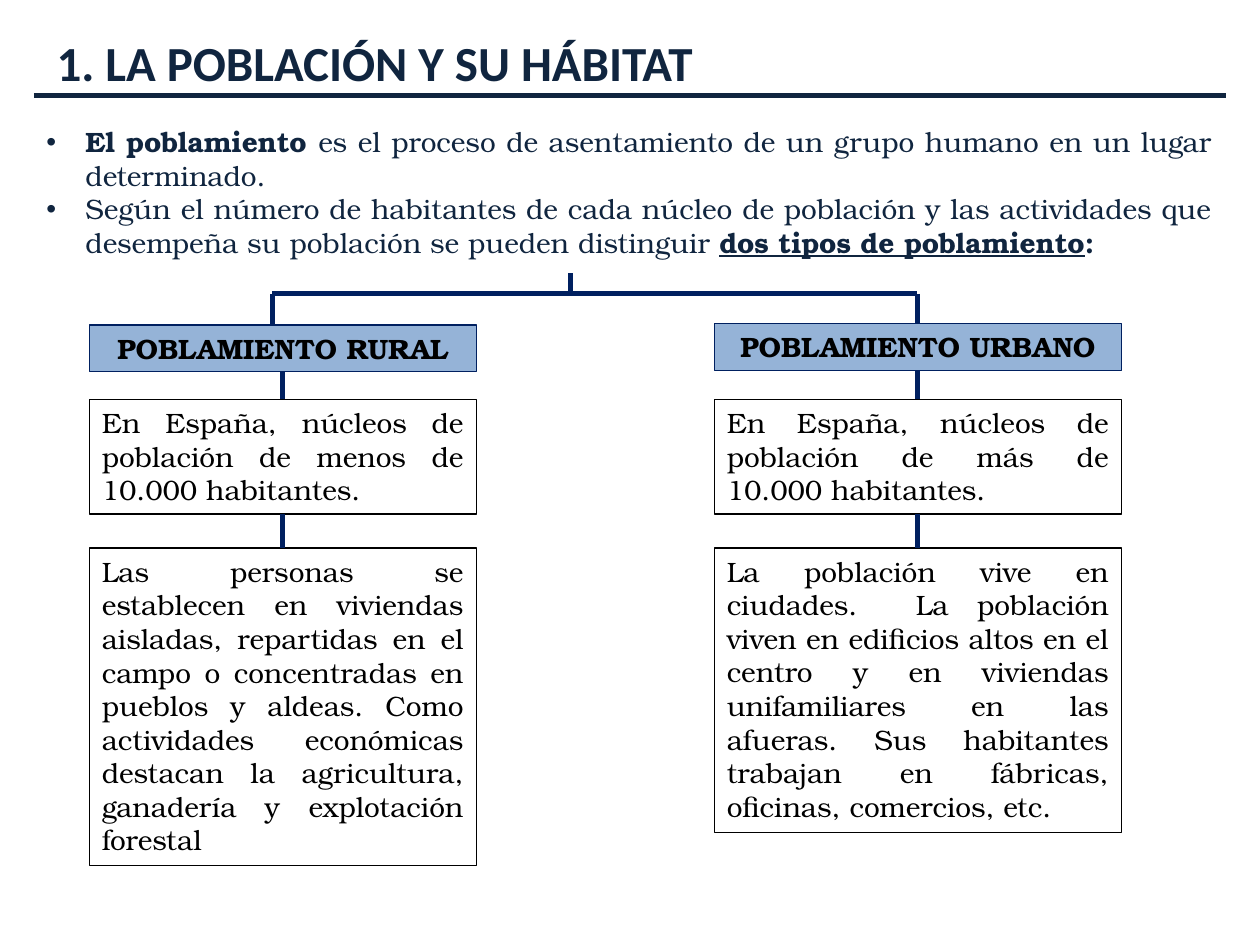
from lxml import etree
from pptx import Presentation
from pptx import util as u
from pptx.dml.color import RGBColor
from pptx.enum import shapes, text
from pptx.oxml.ns import qn

NAVY, BLUE, LIGHT, BLACK = "10253F", "002060", "95B3D7", "000000"
JUSTIFY, CENTER = text.PP_ALIGN.JUSTIFY, text.PP_ALIGN.CENTER


def rgb(value):
    return RGBColor.from_string(value)


class Deck:
    """Style and current slide."""
    font = "TeX Gyre Bonum"
    size = 16

    def __init__(self, prs):
        self.s = prs.slides.add_slide(prs.slide_layouts[6])

    def run(self, p, words, color=BLACK, bold=False, underline=False,
            font=None, size=None):
        r = p.add_run()
        r.text = words
        r.font.name = font or self.font
        r.font.size = u.Pt(size or self.size)
        r.font.bold = bold
        r.font.underline = underline
        r.font.color.rgb = rgb(color)

    def textbox(self, *at):
        tf = self.s.shapes.add_textbox(*map(u.Inches, at)).text_frame
        tf.word_wrap = True
        return tf

    def bullet(self, p, color):
        pPr = p._p.get_or_add_pPr()
        pPr.set("marL", str(u.Inches(0.31)))
        pPr.set("indent", str(-u.Inches(0.31)))
        bu_clr = etree.SubElement(pPr, qn("a:buClr"))
        etree.SubElement(bu_clr, qn("a:srgbClr"), val=color)
        etree.SubElement(pPr, qn("a:buFont"), typeface="Arial")
        etree.SubElement(pPr, qn("a:buChar"), char="•")

    def box(self, at, words, align=JUSTIFY, fill=None, line=BLACK, bold=False):
        sp = self.s.shapes.add_shape(shapes.MSO_SHAPE.RECTANGLE,
                                     *map(u.Inches, at))
        sp.shadow.inherit = False
        if fill:
            sp.fill.solid()
            sp.fill.fore_color.rgb = rgb(fill)
        else:
            sp.fill.background()
        sp.line.color.rgb = rgb(line)
        sp.line.width = u.Pt(0.75)
        tf = sp.text_frame
        tf.word_wrap = True
        tf.vertical_anchor = text.MSO_ANCHOR.TOP
        p = tf.paragraphs[0]
        p.alignment = align
        self.run(p, words, bold=bold)
        return sp

    def line(self, x1, y1, x2, y2, color=BLUE):
        c = self.s.shapes.add_connector(shapes.MSO_CONNECTOR.STRAIGHT,
                                        *map(u.Inches, (x1, y1, x2, y2)))
        c.line.color.rgb = rgb(color)
        c.line.width = u.Pt(3)
        etree.SubElement(c._element.spPr, qn("a:effectLst"))
        return c

    def link(self, upper, lower):
        c = self.line(0, 0, 0, 0)
        c.begin_connect(upper, 2)
        c.end_connect(lower, 0)


def main():
    prs = Presentation()
    prs.slide_width, prs.slide_height = u.Inches(10), u.Inches(7.5)
    deck = Deck(prs)

    # Title and rule
    deck.line(0.27, 0.76, 9.73, 0.76, NAVY)
    tf = deck.textbox(0.35, 0.21, 5.75, 0.57)
    deck.run(tf.paragraphs[0], "1. LA POBLACIÓN Y SU HÁBITAT", NAVY,
             bold=True, font="Calibri", size=28)

    # Introduction: (words, bold, underline) runs for each bullet
    intro = [
        [("El poblamiento ", True, False),
         ("es el proceso de asentamiento de un grupo humano en un lugar "
          "determinado.", False, False)],
        [("Según el número de habitantes de cada núcleo de población y las "
          "actividades que desempeña su población se pueden distinguir ",
          False, False),
         ("dos tipos de poblamiento", True, True),
         (":", True, False)],
    ]
    tf = deck.textbox(0.27, 0.94, 9.45, 1.18)
    for i, runs in enumerate(intro):
        p = tf.add_paragraph() if i else tf.paragraphs[0]
        p.alignment = JUSTIFY
        deck.bullet(p, NAVY)
        for words, bold, underline in runs:
            deck.run(p, words, NAVY, bold, underline)

    # Branching lines
    left, right, bar = 2.16, 7.28, 2.33
    deck.line(4.53, 2.17, 4.53, bar)
    deck.line(left, bar, right, bar)
    for x in (left, right):
        deck.line(x, bar, x, 2.81)

    # Columns: left, width, header top, last box height, texts
    columns = [
        (0.71, 3.07, 2.58, 2.52, "POBLAMIENTO RURAL",
         "En España, núcleos de población de menos de 10.000 habitantes.",
         "Las personas se establecen en viviendas aisladas, repartidas en el "
         "campo o concentradas en pueblos y aldeas. Como actividades "
         "económicas destacan la agricultura, ganadería y explotación "
         "forestal"),
        (5.67, 3.23, 2.57, 2.26, "POBLAMIENTO URBANO",
         "En España, núcleos de población de más de 10.000 habitantes.",
         "La población vive en ciudades.\tLa población viven en edificios "
         "altos en el centro y en viviendas unifamiliares en las afueras. "
         "Sus habitantes trabajan en fábricas, oficinas, comercios, etc."),
    ]
    for x, w, top, height, name, size, life in columns:
        header = deck.box((x, top, w, 0.37), name, CENTER, LIGHT, BLUE, True)
        size_box = deck.box((x, 3.17, w, 0.91), size)
        life_box = deck.box((x, 4.35, w, height), life)
        deck.link(header, size_box)
        deck.link(size_box, life_box)

    prs.save("out.pptx")


if __name__ == "__main__":
    main()
